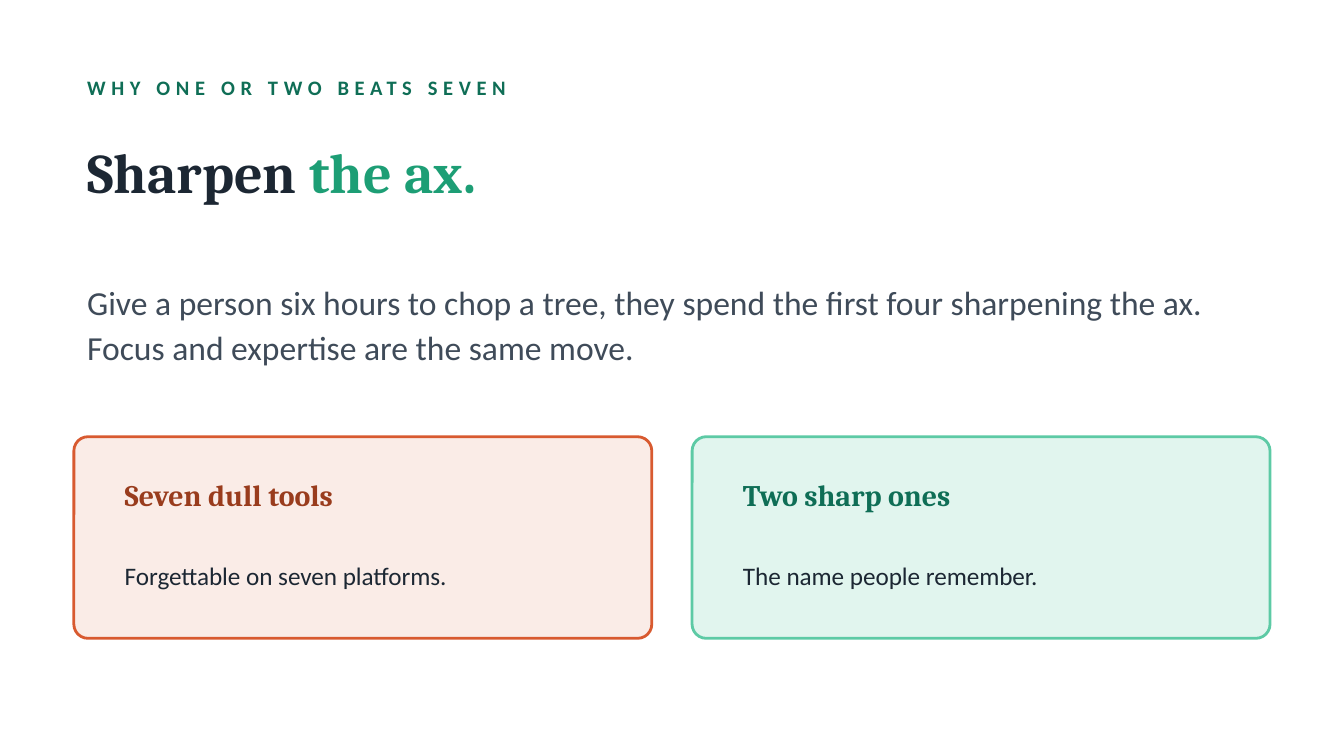
from dataclasses import dataclass

from pptx import Presentation
from pptx.dml.color import RGBColor
from pptx.enum.shapes import MSO_SHAPE
from pptx.enum.text import MSO_ANCHOR, MSO_AUTO_SIZE, PP_ALIGN
from pptx.shapes.autoshape import Shape
from pptx.slide import Slide
from pptx.util import Emu, Pt

PX = 4572
COLORS = {
    "ink": "1C2733",
    "slate": "3F4B59",
    "green": "1D9E75",
    "dark_green": "0F6E56",
    "mint": "5DCAA5",
    "pale_mint": "E1F5EE",
    "rust": "993C1D",
    "orange": "D85A30",
    "pale_orange": "FAECE7",
}
SLIDE_W, SLIDE_H = 2000, 1125
LEFT, WIDTH = 110, 1780
CARD_TOP, CARD_W, CARD_H, CARD_GAP = 650, 860, 300, 60
CARD_PAD, CARD_TEXT_W = 56, 760


@dataclass(frozen=True)
class Box:
    x: int
    y: int
    w: int
    h: int

    def emu(self) -> tuple[Emu, ...]:
        return tuple(Emu(v * PX) for v in (self.x, self.y, self.w, self.h))


@dataclass(frozen=True)
class Style:
    font: str
    size: float
    color: str
    bold: bool = False
    line_spacing: float = 1.0
    tracking: int = 0


@dataclass(frozen=True)
class Card:
    heading: str
    body: str
    fill: str
    line: str
    heading_color: str


def rgb(name: str) -> RGBColor:
    return RGBColor.from_string(COLORS[name])


def write(sp: Shape, runs: list[str], style: Style) -> None:
    tf = sp.text_frame
    tf.word_wrap = True
    tf.auto_size = MSO_AUTO_SIZE.NONE
    tf.vertical_anchor = MSO_ANCHOR.MIDDLE
    p = tf.paragraphs[0]
    p.alignment = PP_ALIGN.LEFT
    p.line_spacing = style.line_spacing
    p.font.name = style.font
    p.font.size = Pt(style.size)
    p.font.bold = style.bold
    p.font.color.rgb = rgb(style.color)
    for text in runs:
        r = p.add_run()
        r.text = text
        if style.tracking:
            r.font._element.set("spc", str(style.tracking * 100))


def add_text(s: Slide, box: Box, text: str, style: Style) -> None:
    write(s.shapes.add_textbox(*box.emu()), [text], style)


def add_title(s: Slide, box: Box, runs: list[str], style: Style, accent: str) -> None:
    sp = s.shapes.title
    sp.left, sp.top, sp.width, sp.height = box.emu()
    write(sp, runs, style)
    sp.text_frame.paragraphs[0].runs[-1].font.color.rgb = rgb(accent)


def add_card(s: Slide, x: int, card: Card) -> None:
    box = Box(x, CARD_TOP, CARD_W, CARD_H)
    sp = s.shapes.add_shape(MSO_SHAPE.ROUNDED_RECTANGLE, *box.emu())
    sp.adjustments[0] = 0.07
    sp.shadow.inherit = False
    sp.fill.solid()
    sp.fill.fore_color.rgb = rgb(card.fill)
    sp.line.color.rgb = rgb(card.line)
    sp.line.width = Pt(1.5)
    add_text(s, Box(x + CARD_PAD, CARD_TOP + 36, CARD_TEXT_W, 100), card.heading,
             Style("Cambria", 16, card.heading_color, bold=True))
    add_text(s, Box(x + CARD_PAD, CARD_TOP + 144, CARD_TEXT_W, 120), card.body,
             Style("Calibri", 13.5, "ink", line_spacing=1.1))


def main() -> None:
    prs = Presentation()
    prs.slide_width, prs.slide_height = Emu(SLIDE_W * PX), Emu(SLIDE_H * PX)
    s = prs.slides.add_slide(prs.slide_layouts.get_by_name("Title Only"))

    add_text(s, Box(LEFT, 100, WIDTH, 60), "WHY ONE OR TWO BEATS SEVEN",
             Style("Calibri", 11, "dark_green", bold=True, tracking=3))
    add_title(s, Box(LEFT, 170, WIDTH, 170), ["Sharpen ", "the ax."],
              Style("Cambria", 30, "ink", bold=True), "green")
    add_text(s, Box(LEFT, 390, WIDTH, 180),
             "Give a person six hours to chop a tree, they spend the first four "
             "sharpening the ax. Focus and expertise are the same move.",
             Style("Calibri", 18, "slate", line_spacing=1.1))

    cards = [
        Card("Seven dull tools", "Forgettable on seven platforms.",
             "pale_orange", "orange", "rust"),
        Card("Two sharp ones", "The name people remember.",
             "pale_mint", "mint", "dark_green"),
    ]
    for i, card in enumerate(cards):
        add_card(s, LEFT + i * (CARD_W + CARD_GAP), card)

    prs.save("out.pptx")


if __name__ == "__main__":
    main()
